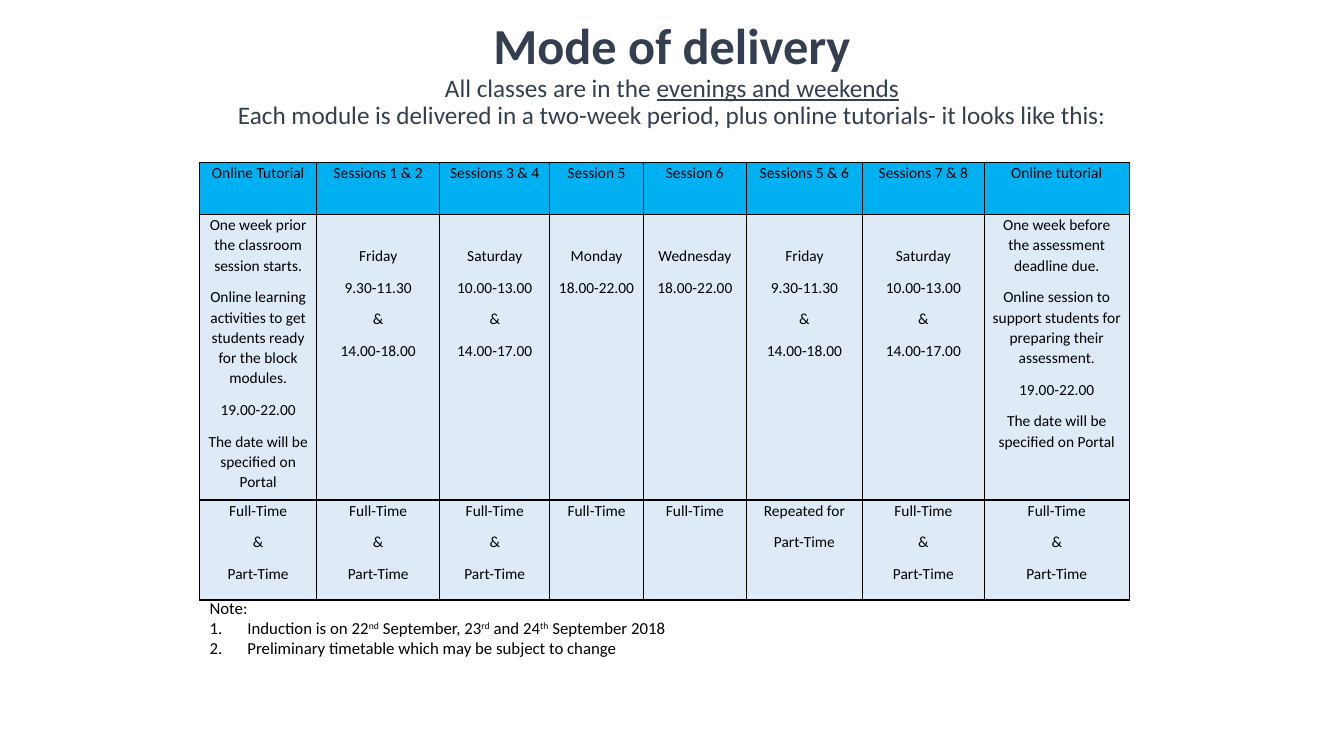
from dataclasses import dataclass

from lxml.etree import SubElement
from pptx import Presentation
from pptx.dml.color import RGBColor
from pptx.enum.text import MSO_ANCHOR, MSO_AUTO_SIZE, PP_ALIGN
from pptx.oxml.ns import qn
from pptx.util import Pt


@dataclass(frozen=True)
class Theme:
    font: str = "Calibri"
    heading: RGBColor = RGBColor(0x33, 0x3F, 0x50)
    ink: RGBColor = RGBColor(0, 0, 0)
    header_fill: RGBColor = RGBColor(0x00, 0xB0, 0xF0)
    body_fill: RGBColor = RGBColor(0xDE, 0xEA, 0xF6)
    border: str = "000000"
    title_size: float = 36
    subtitle_size: float = 18
    table_size: float = 11
    note_size: float = 12


@dataclass(frozen=True)
class Span:
    text: str
    underline: bool = False
    raised: bool = False


@dataclass(frozen=True)
class Session:
    name: str
    width: float
    schedule: tuple[str, ...]
    audience: tuple[str, ...]
    lead: float = 22.4


THEME = Theme()
EVERYONE = ("Full-Time", "&", "Part-Time")
FULL_TIME = ("Full-Time",)
FRIDAY = ("Friday", "9.30-11.30", "&", "14.00-18.00")
SATURDAY = ("Saturday", "10.00-13.00", "&", "14.00-17.00")
TUTORIAL_SLOT = ("19.00-22.00", "The date will be specified on Portal")
ROW_HEIGHTS = (37.2, 204, 71.4)

SESSIONS = (
    Session("Online Tutorial", 83.5,
            ("One week prior the classroom session starts.",
             "Online learning activities to get students ready for the block modules.",
             *TUTORIAL_SLOT), EVERYONE, lead=0),
    Session("Sessions 1 & 2", 88, FRIDAY, EVERYONE),
    Session("Sessions 3 & 4", 78.5, SATURDAY, EVERYONE),
    Session("Session 5", 67, ("Monday", "18.00-22.00"), FULL_TIME),
    Session("Session 6", 73.5, ("Wednesday", "18.00-22.00"), FULL_TIME),
    Session("Sessions 5 & 6", 83, FRIDAY, ("Repeated for", "Part-Time")),
    Session("Sessions 7 & 8", 87, SATURDAY, EVERYONE),
    Session("Online tutorial", 103.5,
            ("One week before the assessment deadline due.",
             "Online session to support students for preparing their assessment.",
             *TUTORIAL_SLOT), EVERYONE, lead=0),
)

SUBTITLES = (
    (Span("All classes are in the "), Span("evenings and weekends", underline=True)),
    (Span("Each module is delivered in a two-week period, "
          "plus online tutorials- it looks like this:"),),
)

NOTES = (
    (Span("Induction is on 22"), Span("nd", raised=True),
     Span(" September, 23"), Span("rd", raised=True),
     Span(" and 24"), Span("th", raised=True), Span(" September 2018")),
    (Span("Preliminary timetable which may be subject to change"),),
)


def add_spans(paragraph, spans: tuple[Span, ...], size: float,
              color: RGBColor, bold: bool = False) -> None:
    for span in spans:
        run = paragraph.add_run()
        run.text = span.text
        run.font.name = THEME.font
        run.font.size = Pt(size)
        run.font.bold = bold
        run.font.color.rgb = color
        if span.underline:
            run.font.underline = True
        if span.raised:
            run._r.get_or_add_rPr().set("baseline", "30000")


def add_heading(slide) -> None:
    title = slide.shapes.title
    title.left, title.top, title.width, title.height = Pt(66), Pt(8.6), Pt(828), Pt(140.4)
    frame = title.text_frame
    frame.word_wrap = True
    frame.auto_size = MSO_AUTO_SIZE.NONE
    frame.vertical_anchor = MSO_ANCHOR.TOP
    frame.margin_top = Pt(6.6)
    add_spans(frame.paragraphs[0], (Span("Mode of delivery"),),
              THEME.title_size, THEME.heading, bold=True)
    for spans in SUBTITLES:
        add_spans(frame.add_paragraph(), spans, THEME.subtitle_size, THEME.heading)
    for paragraph in frame.paragraphs:
        paragraph.alignment = PP_ALIGN.CENTER
        paragraph.line_spacing = 0.9


def outline_cell(cell) -> None:
    properties = cell._tc.get_or_add_tcPr()
    for position, side in enumerate(("a:lnL", "a:lnR", "a:lnT", "a:lnB")):
        edge = SubElement(properties, qn(side), w=str(Pt(1)))
        fill = SubElement(edge, qn("a:solidFill"))
        SubElement(fill, qn("a:srgbClr"), val=THEME.border)
        properties.insert(position, edge)


def fill_cell(cell, lines: tuple[str, ...], color: RGBColor, lead: float = 0) -> None:
    cell.fill.solid()
    cell.fill.fore_color.rgb = color
    cell.margin_left = cell.margin_right = Pt(5.4)
    cell.margin_top, cell.margin_bottom = Pt(lead), Pt(0)
    outline_cell(cell)
    frame = cell.text_frame
    for index, line in enumerate(lines):
        paragraph = frame.add_paragraph() if index else frame.paragraphs[0]
        paragraph.alignment = PP_ALIGN.CENTER
        paragraph.line_spacing = 1.07
        paragraph.space_after = Pt(8)
        add_spans(paragraph, (Span(line),), THEME.table_size, THEME.ink)


def add_timetable(slide) -> None:
    total_width = sum(session.width for session in SESSIONS)
    timetable = slide.shapes.add_table(
        len(ROW_HEIGHTS), len(SESSIONS), Pt(142.7), Pt(116),
        Pt(total_width), Pt(sum(ROW_HEIGHTS))).table
    timetable.first_row = False
    timetable.horz_banding = False
    for row, height in zip(timetable.rows, ROW_HEIGHTS):
        row.height = Pt(height)
    for column, session in enumerate(SESSIONS):
        timetable.columns[column].width = Pt(session.width)
        fill_cell(timetable.cell(0, column), (session.name,), THEME.header_fill)
        fill_cell(timetable.cell(1, column), session.schedule, THEME.body_fill, session.lead)
        fill_cell(timetable.cell(2, column), session.audience, THEME.body_fill)


def add_notes(slide) -> None:
    frame = slide.shapes.add_textbox(Pt(142.6), Pt(423.4), Pt(461.5), Pt(72.7)).text_frame
    frame.word_wrap = True
    add_spans(frame.paragraphs[0], (Span("Note:"),), THEME.note_size, THEME.ink)
    for spans in NOTES:
        paragraph = frame.add_paragraph()
        properties = paragraph._p.get_or_add_pPr()
        properties.set("marL", str(Pt(27)))
        properties.set("indent", str(Pt(-27)))
        SubElement(properties, qn("a:buFont"), typeface=THEME.font)
        SubElement(properties, qn("a:buAutoNum"), type="arabicPeriod")
        add_spans(paragraph, spans, THEME.note_size, THEME.ink)


def main() -> None:
    presentation = Presentation()
    presentation.slide_width, presentation.slide_height = Pt(960), Pt(540)
    slide = presentation.slides.add_slide(presentation.slide_layouts.get_by_name("Title Only"))
    add_heading(slide)
    add_timetable(slide)
    add_notes(slide)
    presentation.save("out.pptx")


if __name__ == "__main__":
    main()
